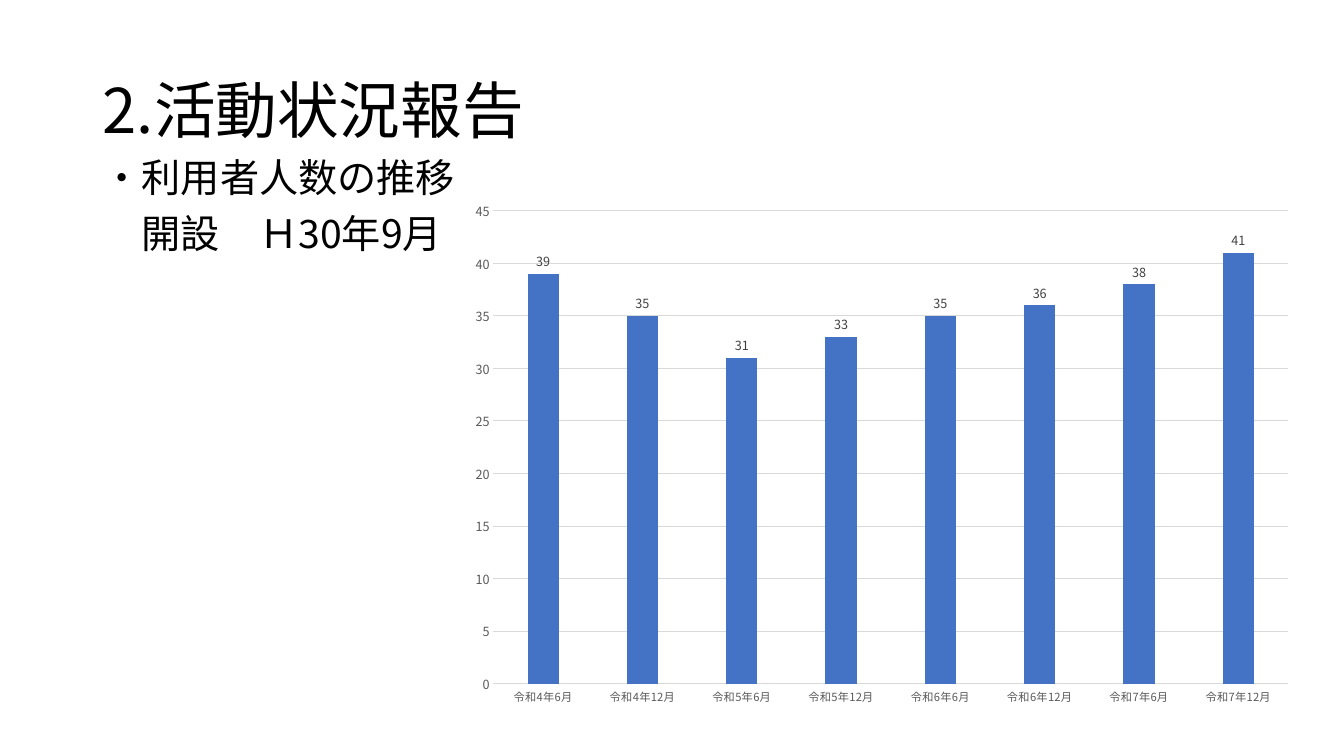
from lxml import etree
from pptx import Presentation
from pptx.chart.data import CategoryChartData
from pptx.dml.color import RGBColor
from pptx.enum.chart import XL_CHART_TYPE, XL_LABEL_POSITION, XL_TICK_MARK
from pptx.enum.text import MSO_ANCHOR
from pptx.oxml import parse_xml
from pptx.oxml.ns import nsdecls, qn
from pptx.util import Inches, Pt

COLUMN_CLUSTERED = XL_CHART_TYPE.COLUMN_CLUSTERED
OUTSIDE_END = XL_LABEL_POSITION.OUTSIDE_END
NO_TICK = XL_TICK_MARK.NONE
TOP = MSO_ANCHOR.TOP
MIDDLE = MSO_ANCHOR.MIDDLE

FONT = "Noto Sans CJK JP"
COLORS = {
    "text": "000000",
    "axis": "595959",
    "label": "404040",
    "grid": "D9D9D9",
    "bar": "4472C4",
}
SLIDE_WIDTH, SLIDE_HEIGHT = 13.33, 7.5
TITLE_BOX = (0.92, 0.4, 11.5, 1.45)
BODY_BOX = (0.92, 1.52, 11.5, 5.23)
CHART_BOX = (4.6, 2, 8.18, 5.1)
PLOT_SHARES = {"x": 0.036, "y": 0.018, "w": 0.964, "h": 0.92}
USERS = {
    "令和4年6月": 39,
    "令和4年12月": 35,
    "令和5年6月": 31,
    "令和5年12月": 33,
    "令和6年6月": 35,
    "令和6年12月": 36,
    "令和7年6月": 38,
    "令和7年12月": 41,
}


def color(name):
    return RGBColor.from_string(COLORS[name])


def format_font(font, size, color_name):
    font.name = FONT
    font.size = Pt(size)
    font.color.rgb = color(color_name)


def add_east_asian_font(root):
    for latin in list(root.iter(qn("a:latin"))):
        east_asian = etree.Element(qn("a:ea"), typeface=FONT)
        latin.addnext(east_asian)


def add_text(slide, box, lines, size, anchor=TOP, space_before=0):
    shape = slide.shapes.add_textbox(*map(Inches, box))
    frame = shape.text_frame
    frame.word_wrap = True
    frame.vertical_anchor = anchor
    for index, line in enumerate(lines):
        paragraph = frame.add_paragraph() if index else frame.paragraphs[0]
        paragraph.line_spacing = 0.9
        paragraph.space_before = Pt(space_before)
        run = paragraph.add_run()
        run.text = line
        format_font(run.font, size, "text")
    add_east_asian_font(shape.element)


def format_grid_line(line):
    line.color.rgb = color("grid")
    line.width = Pt(0.75)


def format_axes(chart):
    for axis, size in ((chart.category_axis, 8), (chart.value_axis, 9)):
        axis.major_tick_mark = axis.minor_tick_mark = NO_TICK
        format_font(axis.tick_labels.font, size, "axis")
    format_grid_line(chart.category_axis.format.line)
    value_axis = chart.value_axis
    value_axis.minimum_scale = 0
    value_axis.maximum_scale = 45
    value_axis.major_unit = 5
    value_axis.format.line.fill.background()
    format_grid_line(value_axis.major_gridlines.format.line)


def set_plot_layout(chart):
    plot_area = chart.element.find(".//" + qn("c:plotArea"))
    for layout in plot_area.findall(qn("c:layout")):
        plot_area.remove(layout)
    modes = '<c:xMode val="edge"/><c:yMode val="edge"/>'
    shares = "".join(f'<c:{key} val="{share}"/>' for key, share in PLOT_SHARES.items())
    plot_area.insert(0, parse_xml(
        f'<c:layout {nsdecls("c")}><c:manualLayout><c:layoutTarget val="inner"/>'
        f"{modes}{shares}</c:manualLayout></c:layout>"
    ))


def add_users_chart(slide, box):
    data = CategoryChartData()
    data.categories = list(USERS)
    data.add_series("Series 1", list(USERS.values()))
    chart = slide.shapes.add_chart(COLUMN_CLUSTERED, *map(Inches, box), data).chart
    chart.has_title = False
    chart.has_legend = False
    format_font(chart.font, 10, "text")
    format_axes(chart)
    plot = chart.plots[0]
    plot.gap_width = 219
    plot.vary_by_categories = False
    series = plot.series[0]
    series.format.fill.solid()
    series.format.fill.fore_color.rgb = color("bar")
    labels = series.data_labels
    labels.show_value = True
    labels.position = OUTSIDE_END
    format_font(labels.font, 9, "label")
    set_plot_layout(chart)
    add_east_asian_font(chart.element)


def build_report_slide(presentation):
    slide = presentation.slides.add_slide(presentation.slide_layouts[6])
    add_text(slide, TITLE_BOX, ["2.活動状況報告"], size=44, anchor=MIDDLE)
    add_text(slide, BODY_BOX, ["・利用者人数の推移", "　開設　Ｈ30年9月"],
             size=28, space_before=10)
    add_users_chart(slide, CHART_BOX)


def main():
    presentation = Presentation()
    presentation.slide_width = Inches(SLIDE_WIDTH)
    presentation.slide_height = Inches(SLIDE_HEIGHT)
    build_report_slide(presentation)
    presentation.save("out.pptx")


if __name__ == "__main__":
    main()
